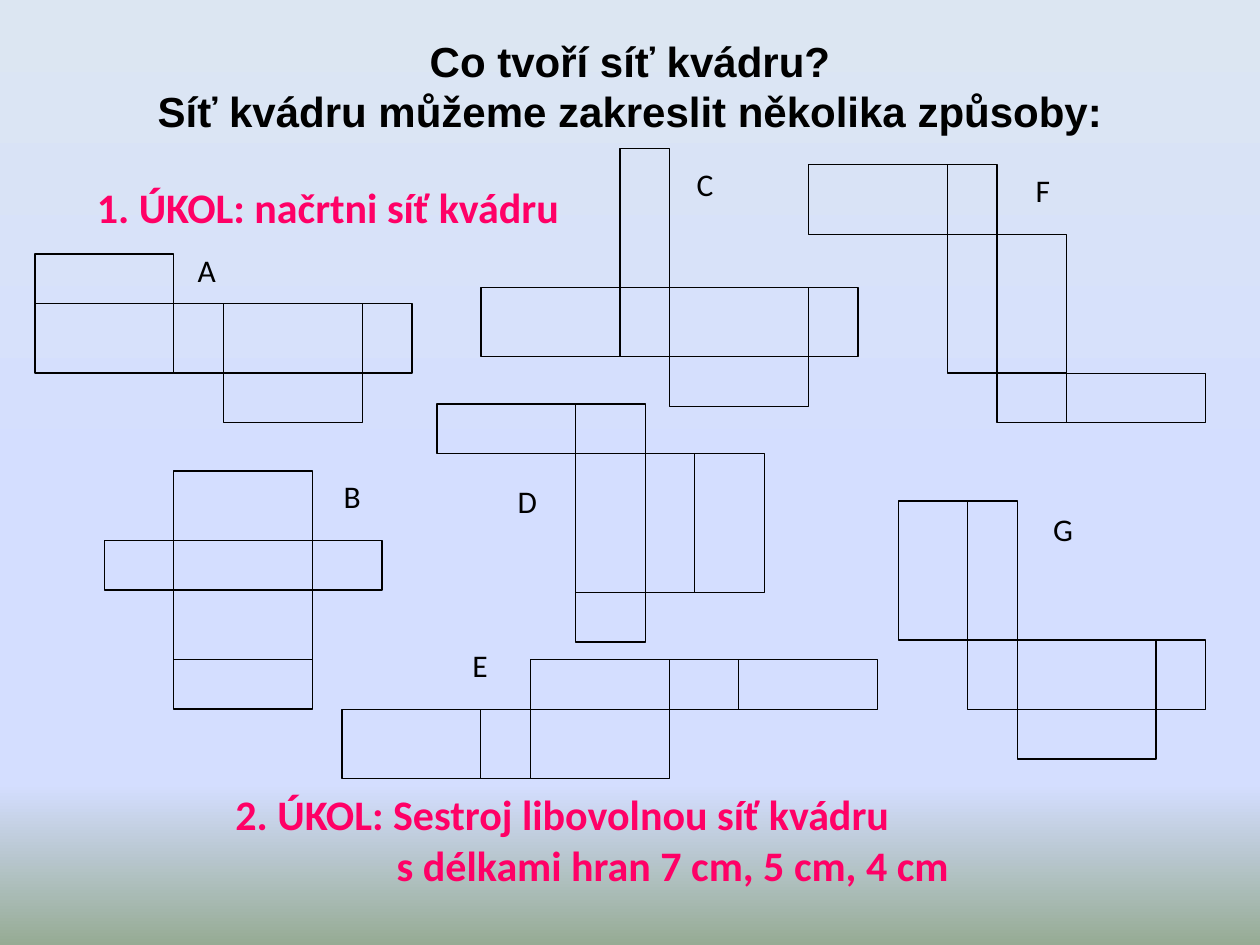
"""Build the slide about the nets of a cuboid."""
from dataclasses import dataclass

from lxml import etree
from pptx import Presentation
from pptx import util as u
from pptx.dml.color import RGBColor
from pptx.enum import shapes, text
from pptx.oxml.ns import qn

L, M, S = (u.Cm(edge).inches for edge in (2.8, 1.4, 1))
EDGES = {"L": L, "M": M, "S": S}


@dataclass(frozen=True)
class Theme:
    """Colours, fonts and sizes of the slide."""

    ink: str = "000000"
    accent: str = "FF0066"
    heading_font: str = "Arial"
    body_font: str = "Calibri"
    heading_size: int = 24
    label_size: int = 18
    outline: float = 0.75
    sky: tuple = ((0, "DCE6F2"), (53, "D4DEFF"), (83, "D4DEFF"), (100, "96AB94"))


@dataclass(frozen=True)
class Face:
    """One face, named by its two edges and placed from the net's origin."""

    edges: str
    x: float
    y: float


@dataclass(frozen=True)
class Net:
    """A labelled net of six faces."""

    letter: str
    origin: tuple[float, float]
    label: tuple[float, float, float]
    faces: tuple[Face, ...]


@dataclass(frozen=True)
class Task:
    """A task with the hanging indent of its second line."""

    words: str
    area: tuple[float, float, float, float]
    hanging: float


THEME = Theme()

NETS = (
    Net("A", (1.38, 2.41), (1.47, 1.94, 0.35), (
        Face("LM", -L, 0), Face("SM", 0, 0), Face("LM", S, 0),
        Face("SM", S + L, 0), Face("LS", S, M), Face("LS", -L, -S))),
    Net("B", (1.38, 4.29), (2.63, 3.74, 0.34), (
        Face("LS", 0, 0), Face("LM", 0, S), Face("LM", 0, -M),
        Face("MS", L, 0), Face("MS", -M, 0), Face("LS", 0, S + M))),
    Net("C", (4.92, 2.28), (5.43, 1.26, 0.34), (
        Face("LM", -L, 0), Face("SM", 0, 0), Face("LM", S, 0),
        Face("SM", S + L, 0), Face("LS", S, M), Face("SL", 0, -L))),
    Net("D", (4.57, 3.6), (4.01, 3.78, 0.36), (
        Face("ML", 0, 0), Face("SL", M, 0), Face("ML", M + S, 0),
        Face("MS", 0, -S), Face("MS", 0, L), Face("LS", -L, -S))),
    Net("E", (4.21, 5.63), (3.65, 5.08, 0.32), (
        Face("LM", 0, 0), Face("SM", -S, 0), Face("LM", -S - L, 0),
        Face("LS", 0, -S), Face("MS", L, -S), Face("LS", L + M, -S))),
    Net("F", (7.52, 1.86), (8.12, 1.31, 0.32), (
        Face("LM", -L, -M), Face("SM", 0, -M), Face("SL", 0, 0),
        Face("ML", S, 0), Face("MS", S, L), Face("LS", S + M, L))),
    Net("G", (7.68, 5.08), (8.26, 4, 0.36), (
        Face("SM", 0, 0), Face("LM", S, 0), Face("SM", S + L, 0),
        Face("LS", S, M), Face("SL", 0, -L), Face("ML", -M, -L))),
)

TASKS = (
    Task("1. ÚKOL: načrtni síť kvádru", (0.67, 1.39, 3.94, 0.55), 0.38),
    Task("2. ÚKOL: Sestroj libovolnou síť kvádru\vs délkami hran 7 cm, 5 cm, 4 cm",
         (1.77, 6.21, 6.42, 0.67), 1.28),
)


def write(box, words: str, font: str, size: int, color: str, bold: bool, wrap: bool) -> None:
    """Put one formatted paragraph into a shape."""
    frame = box.text_frame
    frame.text = words
    frame.word_wrap = wrap
    frame.auto_size = text.MSO_AUTO_SIZE.NONE if wrap else text.MSO_AUTO_SIZE.SHAPE_TO_FIT_TEXT
    values = {"name": font, "size": u.Pt(size), "bold": bold}
    for span in frame.paragraphs[0].runs:
        for key, value in values.items():
            setattr(span.font, key, value)
        span.font.color.rgb = RGBColor.from_string(color)


def paint_background(page) -> None:
    """Fill the page with the vertical gradient."""
    fill = page.background.fill
    fill.gradient()
    fill.gradient_angle = 270
    stops = page.element.find(".//" + qn("a:gsLst"))
    for stop in list(stops):
        stops.remove(stop)
    for percent, color in THEME.sky:
        stop = etree.SubElement(stops, qn("a:gs"), pos=str(percent * 1000))
        etree.SubElement(stop, qn("a:srgbClr"), val=color)


def add_title(page) -> None:
    """Fill and place the title placeholder."""
    box = page.shapes.title
    area = {"left": 0.5, "top": 0.21, "width": 9, "height": 0.94}
    for key, value in area.items():
        setattr(box, key, u.Inches(value))
    write(box, "Co tvoří síť kvádru?\vSíť kvádru můžeme zakreslit několika způsoby:",
          THEME.heading_font, THEME.heading_size, THEME.ink, True, True)
    box.text_frame.vertical_anchor = text.MSO_ANCHOR.MIDDLE
    box.text_frame.paragraphs[0].alignment = text.PP_ALIGN.CENTER


def add_task(page, task: Task) -> None:
    """Write a task with a hanging indent."""
    box = page.shapes.add_textbox(*map(u.Inches, task.area))
    write(box, task.words, THEME.body_font, THEME.heading_size, THEME.accent, True, True)
    para = box.text_frame.paragraphs[0]
    indent = u.Inches(task.hanging)
    for key, value in {"marL": indent, "indent": -indent}.items():
        para._p.get_or_add_pPr().set(key, str(int(value)))


def add_net(page, net: Net) -> None:
    """Draw the grouped faces of a net and its letter."""
    group = page.shapes.add_group_shape()
    left, top = net.origin
    for face in net.faces:
        width, height = (EDGES[edge] for edge in face.edges)
        area = (left + face.x, top + face.y, width, height)
        box = group.shapes.add_shape(shapes.MSO_SHAPE.RECTANGLE, *map(u.Inches, area))
        box.shadow.inherit = False
        box.fill.background()
        box.line.color.rgb = RGBColor.from_string(THEME.ink)
        box.line.width = u.Pt(THEME.outline)
    label = page.shapes.add_textbox(*map(u.Inches, (*net.label, 0.4)))
    write(label, net.letter, THEME.body_font, THEME.label_size, THEME.ink, False, False)


def main() -> None:
    """Build and save the deck."""
    deck = Presentation()
    deck.slide_width, deck.slide_height = u.Inches(10), u.Inches(7.5)
    page = deck.slides.add_slide(deck.slide_layouts.get_by_name("Title Only"))
    paint_background(page)
    add_title(page)
    for task in TASKS:
        add_task(page, task)
    for net in NETS:
        add_net(page, net)
    deck.save("out.pptx")


if __name__ == "__main__":
    main()
